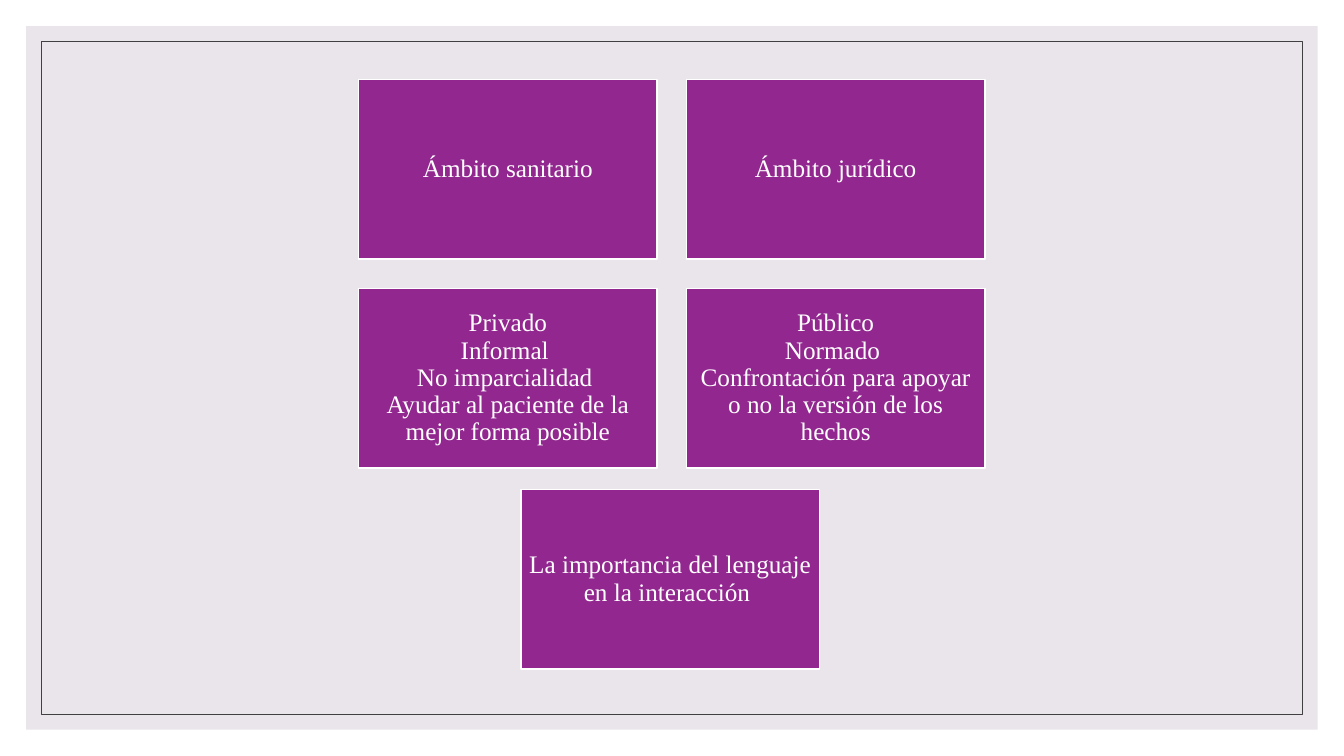
"""Build a slide that compares the health and legal fields."""
from dataclasses import dataclass

import pptx
import pptx.dml.color
import pptx.enum.shapes
import pptx.enum.text
import pptx.util
from pptx.util import Cm


@dataclass(frozen=True)
class Theme:
    """Hold the colours, font and sizes."""
    panel: str = "EAE5EB"
    frame: str = "404040"
    card: str = "92278F"
    light: str = "FFFFFF"
    font: str = "Times New Roman"
    size: int = 18


THEME = Theme()
WIDE, HIGH = 33.87, 19.05
CARD_W, CARD_H, GAP = 7.52, 4.52, 0.74
LEFT, TOP = 9.04, 2.01
GRID = [
    ["Ámbito sanitario", "Ámbito jurídico"],
    [
        "Privado\nInformal \nNo imparcialidad \n"
        "Ayudar al paciente de la mejor forma posible",
        "Público\nNormado \n"
        "Confrontación para apoyar o no la versión de los hechos",
    ],
]
CLOSING = "La importancia del lenguaje en la interacción "


def color(code):
    """Turn a hex code into a colour."""
    return pptx.dml.color.RGBColor.from_string(code)


def add_box(slide, left, top, width, height, fill=None, line=None, weight=1):
    """Add a flat rectangle with optional fill and line."""
    kind = pptx.enum.shapes.MSO_SHAPE.RECTANGLE
    box = slide.shapes.add_shape(kind, Cm(left), Cm(top), Cm(width), Cm(height))
    box.shadow.inherit = False
    if fill:
        box.fill.solid()
        box.fill.fore_color.rgb = color(fill)
    else:
        box.fill.background()
    if line:
        box.line.color.rgb = color(line)
        box.line.width = pptx.util.Pt(weight)
    else:
        box.line.fill.background()
    return box


def add_panel(slide, inset, **style):
    """Add a rectangle set in evenly from the slide edges."""
    add_box(slide, inset, inset, WIDE - 2 * inset, HIGH - 2 * inset, **style)


def add_card(slide, left, top, text):
    """Add a filled card with centred text."""
    card = add_box(slide, left, top, CARD_W, CARD_H, THEME.card, THEME.light)
    frame = card.text_frame
    frame.text = text
    frame.word_wrap = True
    frame.vertical_anchor = pptx.enum.text.MSO_ANCHOR.MIDDLE
    frame.margin_left = frame.margin_right = Cm(0.2)
    frame.margin_top = frame.margin_bottom = Cm(0.2)
    for para in frame.paragraphs:
        para.alignment = pptx.enum.text.PP_ALIGN.CENTER
        para.line_spacing = 0.9
        for run in para.runs:
            run.font.name = THEME.font
            run.font.size = pptx.util.Pt(THEME.size)
            run.font.color.rgb = color(THEME.light)


def main():
    """Draw the panels and cards, then save."""
    deck = pptx.Presentation()
    deck.slide_width, deck.slide_height = Cm(WIDE), Cm(HIGH)
    slide = deck.slides.add_slide(deck.slide_layouts[6])
    add_panel(slide, 0.66, fill=THEME.panel)
    add_panel(slide, 1.04, line=THEME.frame, weight=0.5)
    for row, texts in enumerate(GRID):
        for col, text in enumerate(texts):
            left = LEFT + col * (CARD_W + GAP)
            top = TOP + row * (CARD_H + GAP)
            add_card(slide, left, top, text)
    add_card(slide, 13.13, 12.34, CLOSING)
    deck.save("out.pptx")


if __name__ == "__main__":
    main()
